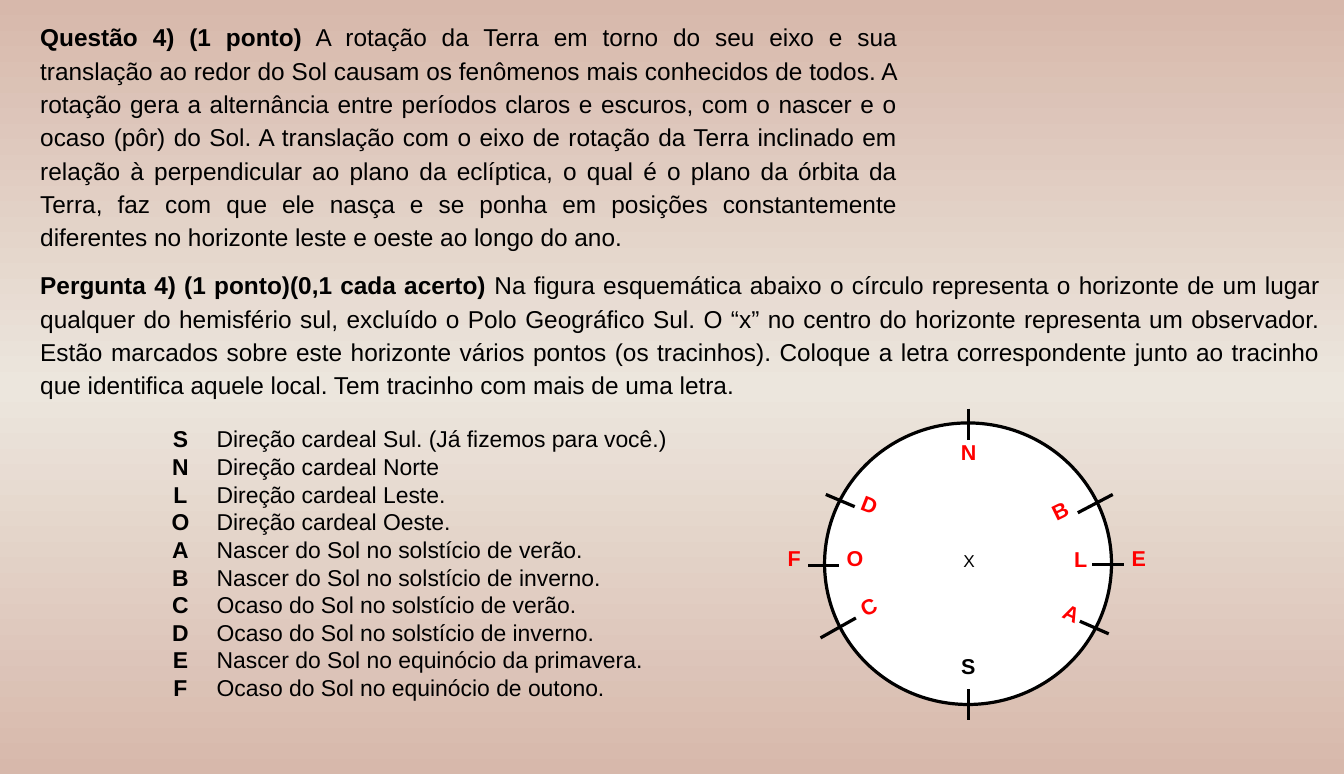
from copy import deepcopy

from lxml.etree import SubElement
from pptx import Presentation
from pptx.dml.color import RGBColor
from pptx.enum.shapes import MSO_CONNECTOR, MSO_SHAPE
from pptx.enum.text import MSO_ANCHOR, MSO_AUTO_SIZE, PP_ALIGN
from pptx.oxml.ns import qn
from pptx.util import Cm, Pt

COLORS = {"edge": "D7B8AB", "middle": "ECE6DD", "ink": "000000",
          "answer": "FF0000", "paper": "FFFFFF"}
FONT = "Arial"
PLAIN_TABLE_STYLE = "{2D5ABB26-0587-4C30-8999-92F81FD0307C}"
LINE_WIDTH = Pt(2.25)

QUESTION = (
    "Questão 4) (1 ponto)",
    " A rotação da Terra em torno do seu eixo e sua translação ao redor do Sol "
    "causam os fenômenos mais conhecidos de todos. A rotação gera a alternância "
    "entre períodos claros e escuros, com o nascer e o ocaso (pôr) do Sol. A "
    "translação com o eixo de rotação da Terra inclinado em relação à "
    "perpendicular ao plano da eclíptica, o qual é o plano da órbita da Terra, "
    "faz com que ele nasça e se ponha em posições constantemente diferentes no "
    "horizonte leste e oeste ao longo do ano.",
)
TASK = (
    "Pergunta 4) (1 ponto)(0,1 cada acerto)",
    " Na figura esquemática abaixo o círculo representa o horizonte de um lugar "
    "qualquer do hemisfério sul, excluído o Polo Geográfico Sul. O “x” no centro "
    "do horizonte representa um observador. Estão marcados sobre este horizonte "
    "vários pontos (os tracinhos). Coloque a letra correspondente junto ao "
    "tracinho que identifica aquele local. Tem tracinho com mais de uma letra.",
)
LEGEND = {
    "S": "Direção cardeal Sul. (Já fizemos para você.)",
    "N": "Direção cardeal Norte",
    "L": "Direção cardeal Leste.",
    "O": "Direção cardeal Oeste.",
    "A": "Nascer do Sol no solstício de verão.",
    "B": "Nascer do Sol no solstício de inverno.",
    "C": "Ocaso do Sol no solstício de verão.",
    "D": "Ocaso do Sol no solstício de inverno.",
    "E": "Nascer do Sol no equinócio da primavera.",
    "F": "Ocaso do Sol no equinócio de outono.",
}
# Tick ends in cm: x1, y1, x2, y2
TICKS = [
    (19.89, 13.92, 20.65, 13.92), (26.87, 13.89, 27.66, 13.89),
    (23.83, 10.06, 23.83, 10.82), (23.83, 16.97, 23.83, 17.73),
    (20.32, 12.17, 21.03, 12.47), (26.57, 15.29, 27.28, 15.6),
    (27.38, 12.17, 26.52, 12.62), (21.06, 15.21, 20.19, 15.7),
]
# Answer letters: left, top, width, height in cm and rotation
ANSWERS = {
    "N": (23.11, 10.69, 1.45, 1.47, 0),
    "O": (20.42, 13.28, 1.24, 1.37, 0),
    "L": (25.98, 13.31, 1.22, 1.37, 0),
    "D": (20.5, 11.96, 1.57, 1.52, 21.5),
    "C": (20.73, 14.45, 1.45, 1.3, 334),
    "B": (25.6, 12.09, 1.19, 1.42, 334),
    "A": (25.68, 14.63, 1.3, 1.07, 24.9),
    "F": (18.72, 13.28, 1.65, 1.63, 0),
    "E": (27.31, 13.28, 1.42, 1.85, 0),
}


def color(name):
    return RGBColor.from_string(COLORS[name])


def write(paragraph, text, size=15, bold=False, ink="ink", align=PP_ALIGN.CENTER):
    paragraph.alignment = align
    run = paragraph.add_run()
    run.text = text
    run.font.name, run.font.size, run.font.bold = FONT, Pt(size), bold
    run.font.color.rgb = color(ink)


def add_box(shapes, left, top, width, height, rotation=0):
    box = shapes.add_textbox(Cm(left), Cm(top), Cm(width), Cm(height))
    box.rotation = rotation
    box.text_frame.word_wrap = True
    return box.text_frame


def add_passage(slide, place, heading, body):
    frame = add_box(slide.shapes, *place)
    frame.auto_size = MSO_AUTO_SIZE.SHAPE_TO_FIT_TEXT
    paragraph = frame.paragraphs[0]
    paragraph.line_spacing = 1.14
    write(paragraph, heading, size=17, bold=True, align=PP_ALIGN.JUSTIFY)
    write(paragraph, body, size=17, align=PP_ALIGN.JUSTIFY)


def add_letter(shapes, letter, place, **style):
    write(add_box(shapes, *place).paragraphs[0], letter, **style)


def set_background(slide):
    fill = slide.background.fill
    fill.gradient()
    fill.gradient_angle = 270
    first = fill.gradient_stops[0]
    last = fill.gradient_stops[1]
    stop_list = fill._fill._gradFill.find(qn("a:gsLst"))
    stop_list.insert(1, deepcopy(stop_list[0]))
    middle = fill.gradient_stops[1]
    for stop, position, name in ((first, 0, "edge"), (middle, 0.5, "middle"),
                                 (last, 1, "edge")):
        stop.position = position
        stop.color.rgb = color(name)


def add_legend(slide):
    row_height = Cm(0.68)
    table = slide.shapes.add_table(len(LEGEND), 2, Cm(3.73), Cm(10.49),
                                   Cm(15.21), row_height * len(LEGEND)).table
    table._tbl.tblPr.find(qn("a:tableStyleId")).text = PLAIN_TABLE_STYLE
    table.first_row = table.horz_banding = False
    table.columns[0].width, table.columns[1].width = Cm(1.42), Cm(13.79)
    for row, entry in zip(table.rows, LEGEND.items()):
        row.height = row_height
        for column, (cell, text) in enumerate(zip(row.cells, entry)):
            cell.fill.background()
            cell.vertical_anchor = MSO_ANCHOR.MIDDLE
            cell.margin_left = cell.margin_right = Cm(0.18)
            cell.margin_top = cell.margin_bottom = 0
            write(cell.text_frame.paragraphs[0], text, size=16, bold=column == 0,
                  align=PP_ALIGN.LEFT if column else PP_ALIGN.CENTER)


def add_tick(shapes, ends):
    tick = shapes.add_connector(MSO_CONNECTOR.STRAIGHT, *map(Cm, ends))
    tick.line.color.rgb = color("ink")
    tick.line.width = LINE_WIDTH
    SubElement(tick._element.spPr, qn("a:effectLst"))


def add_horizon(slide):
    shapes = slide.shapes.add_group_shape().shapes
    circle = shapes.add_shape(MSO_SHAPE.OVAL, Cm(20.29), Cm(10.41),
                              Cm(7.06), Cm(6.93))
    circle.shadow.inherit = False
    circle.fill.solid()
    circle.fill.fore_color.rgb = color("paper")
    circle.line.color.rgb = color("ink")
    circle.line.width = LINE_WIDTH
    for ends in TICKS:
        add_tick(shapes, ends)
    add_letter(shapes, "X", (22.83, 13.41, 2.03, 1.5), size=12)
    add_letter(shapes, "S", (22.81, 15.95, 2.03, 1.5), bold=True)


def main():
    presentation = Presentation()
    presentation.slide_width, presentation.slide_height = Cm(33.07), Cm(19.05)
    slide = presentation.slides.add_slide(presentation.slide_layouts[6])
    set_background(slide)

    # Question and task
    add_passage(slide, (0.74, 0.33, 21.59, 5.99), *QUESTION)
    add_passage(slide, (0.74, 6.43, 32, 3.51), *TASK)

    # Legend and horizon diagram
    add_legend(slide)
    add_horizon(slide)

    # Answers around the horizon
    for letter, place in ANSWERS.items():
        add_letter(slide.shapes, letter, place, bold=True, ink="answer")

    presentation.save("out.pptx")


if __name__ == "__main__":
    main()
